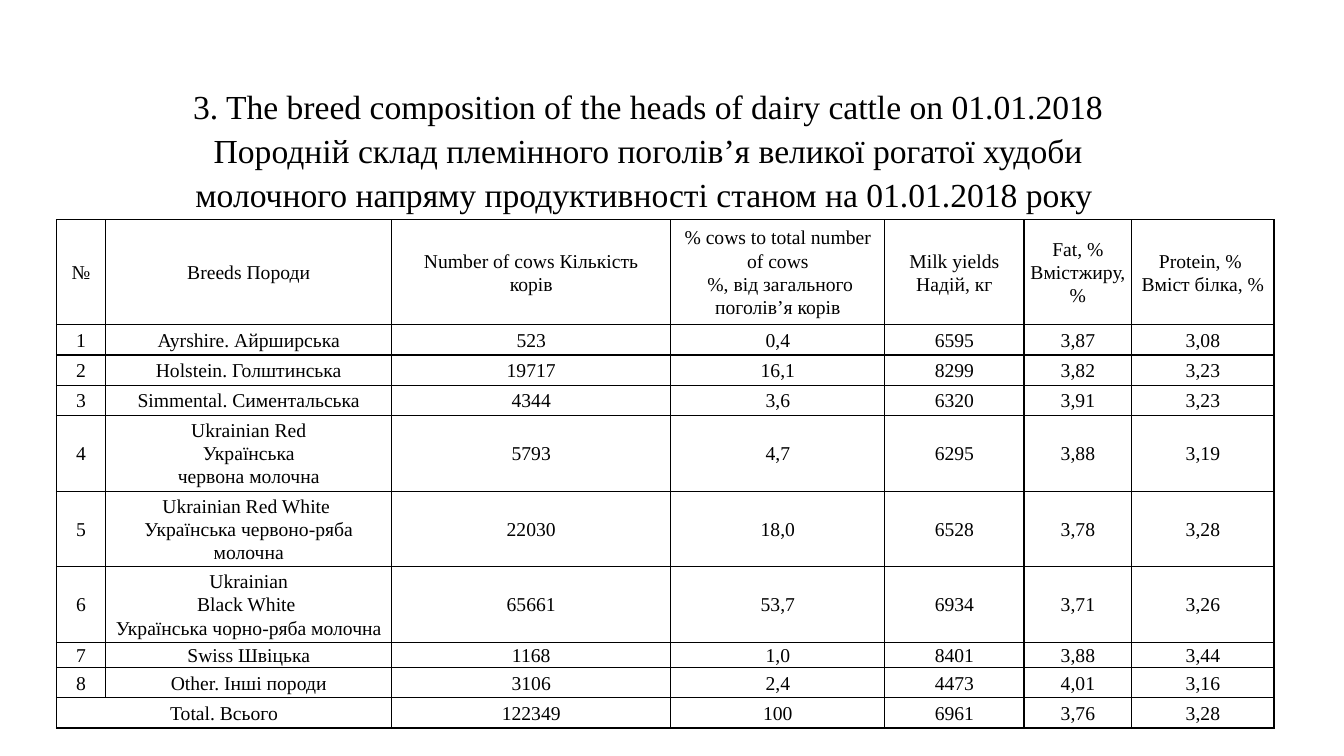
"""Builds the slide on the breed composition of dairy cattle."""
from dataclasses import astuple, dataclass

from lxml import etree
from pptx import Presentation
from pptx.dml.color import RGBColor
from pptx.enum.text import MSO_ANCHOR, MSO_AUTO_SIZE, PP_ALIGN
from pptx.oxml.ns import qn
from pptx.slide import Slide
from pptx.table import _Cell
from pptx.text.text import TextFrame
from pptx.util import Pt

CENTER = PP_ALIGN.CENTER
TOP, MIDDLE = MSO_ANCHOR.TOP, MSO_ANCHOR.MIDDLE
NO_AUTOFIT = MSO_AUTO_SIZE.NONE
TITLE_ONLY = 5
FONT = "Times New Roman"
BLACK = "000000"

TITLE = (
    "3. The breed composition of the heads of dairy cattle on 01.01.2018\n"
    "Породній склад племінного поголів’я великої рогатої худоби\n"
    "молочного напряму продуктивності станом на 01.01.2018 року "
)
COLUMN_WIDTHS = (35.3, 204.2, 199.4, 152.9, 99.4, 77.1, 101.5)
HEADER_HEIGHT, SINGLE, TRIPLE, TIGHT = 75, 21.6, 54, 18


@dataclass
class BreedRow:
    """One row of the table, with its height in points."""
    number: str
    breed: str
    cows: str
    share: str
    milk_yield: str
    fat: str
    protein: str
    height: float = SINGLE


ROWS = [
    BreedRow("№", "Breeds Породи", "Number of cows Кількість\nкорів",
             "% cows to total number of cows\n %, від загального поголів’я корів",
             "Milk yields Надій, кг", "Fat, % Вмістжиру, %",
             "Protein, % \nВміст білка, %", HEADER_HEIGHT),
    BreedRow("1", "Ayrshire. Айрширська", "523", "0,4", "6595", "3,87", "3,08"),
    BreedRow("2", "Holstein. Голштинська", "19717", "16,1", "8299", "3,82", "3,23"),
    BreedRow("3", "Simmental. Симентальська", "4344", "3,6", "6320", "3,91", "3,23"),
    BreedRow("4", "Ukrainian Red\nУкраїнська\nчервона молочна",
             "5793", "4,7", "6295", "3,88", "3,19", TRIPLE),
    BreedRow("5", "Ukrainian Red White \nУкраїнська червоно-ряба молочна",
             "22030", "18,0", "6528", "3,78", "3,28", TRIPLE),
    BreedRow("6", "Ukrainian\nBlack White \nУкраїнська чорно-ряба молочна",
             "65661", "53,7", "6934", "3,71", "3,26", TRIPLE),
    BreedRow("7", "Swiss Швіцька", "1168", "1,0", "8401", "3,88", "3,44", TIGHT),
    BreedRow("8", "Other. Інші породи", "3106", "2,4", "4473", "4,01", "3,16"),
    BreedRow("Total. Всього", "", "122349", "100", "6961", "3,76", "3,28"),
]


def color(hex_code: str) -> RGBColor:
    """Turn a hex string into a colour."""
    return RGBColor.from_string(hex_code)


def write(frame: TextFrame, text: str, size: float, spacing: float) -> None:
    """Fill a text frame with centred paragraphs."""
    frame.text = text
    frame.word_wrap = True
    for paragraph in frame.paragraphs:
        paragraph.alignment = CENTER
        paragraph.line_spacing = spacing
        paragraph.font.size = Pt(size)
        for run in paragraph.runs:
            run.font.name = FONT
            run.font.size = Pt(size)
            run.font.color.rgb = color(BLACK)


def add_borders(cell: _Cell, hex_code: str, width: float) -> None:
    """Draw a solid line on all four sides of a cell."""
    properties = cell._tc.get_or_add_tcPr()
    for index, side in enumerate(("a:lnL", "a:lnR", "a:lnT", "a:lnB")):
        line = etree.Element(qn(side), w=str(Pt(width)))
        fill = etree.SubElement(line, qn("a:solidFill"))
        etree.SubElement(fill, qn("a:srgbClr"), val=hex_code)
        properties.insert(index, line)


def add_title(slide: Slide) -> None:
    """Place the three-line title."""
    title = slide.shapes.title
    title.left, title.top = Pt(100.8), Pt(55.4)
    title.width, title.height = Pt(724.3), Pt(94.3)
    frame = title.text_frame
    frame.auto_size = NO_AUTOFIT
    frame.vertical_anchor = TOP
    write(frame, TITLE, 24, 1.09)


def add_breed_table(slide: Slide) -> None:
    """Place the table of breeds with the total row merged at its start."""
    height = sum(row.height for row in ROWS)
    table = slide.shapes.add_table(
        len(ROWS), len(COLUMN_WIDTHS),
        Pt(40.3), Pt(157), Pt(sum(COLUMN_WIDTHS)), Pt(height)).table
    table.first_row = table.horz_banding = False
    for column, width in zip(table.columns, COLUMN_WIDTHS):
        column.width = Pt(width)
    for row_index, row in enumerate(ROWS):
        table.rows[row_index].height = Pt(row.height)
        for column_index, text in enumerate(astuple(row)[:-1]):
            cell = table.cell(row_index, column_index)
            cell.margin_left = cell.margin_right = Pt(4.3)
            cell.margin_top = cell.margin_bottom = Pt(0)
            cell.vertical_anchor = MIDDLE
            cell.fill.background()
            write(cell.text_frame, text, 14, 1.07)
            add_borders(cell, BLACK, 1)
    total = len(ROWS) - 1
    table.cell(total, 0).merge(table.cell(total, 1))


def main() -> None:
    """Build and save the presentation."""
    presentation = Presentation()
    presentation.slide_width, presentation.slide_height = Pt(960), Pt(540)
    slide = presentation.slides.add_slide(presentation.slide_layouts[TITLE_ONLY])
    add_title(slide)
    add_breed_table(slide)
    presentation.save("out.pptx")


if __name__ == "__main__":
    main()
